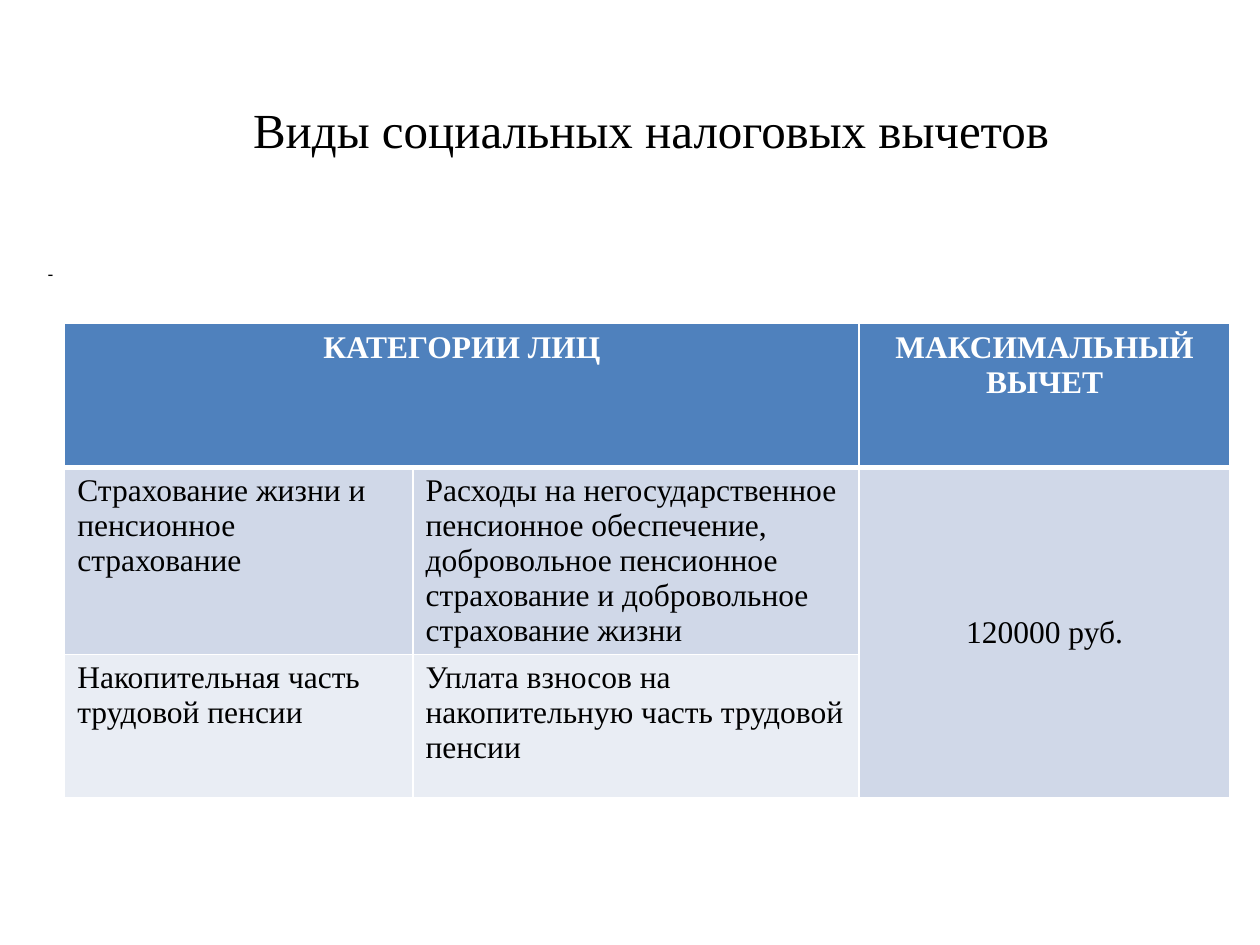
from lxml import etree
from pptx import Presentation
from pptx import util as u
from pptx.dml.color import RGBColor
from pptx.enum import text
from pptx.oxml import ns

Pt = u.Pt
COLORS = {"ink": "000000", "white": "FFFFFF", "header": "4F81BD",
          "band1": "D0D8E8", "band2": "E9EDF4"}
LEFT, CENTER = text.PP_ALIGN.LEFT, text.PP_ALIGN.CENTER
TOP, MIDDLE = text.MSO_ANCHOR.TOP, text.MSO_ANCHOR.MIDDLE

# Content
TITLE = "Виды социальных налоговых вычетов"
BODY = "-"
ROWS = [
    ["КАТЕГОРИИ ЛИЦ", "", "МАКСИМАЛЬНЫЙ ВЫЧЕТ"],
    ["Страхование жизни и пенсионное страхование",
     "Расходы на негосударственное пенсионное обеспечение, добровольное "
     "пенсионное страхование и добровольное страхование жизни",
     "120000 руб."],
    ["Накопительная часть трудовой пенсии",
     "Уплата взносов на накопительную часть трудовой пенсии", ""],
]
COL_WIDTHS = [199, 255, 212]
ROW_HEIGHTS = [82, 107, 82]
ROW_FILLS = ["header", "band1", "band2"]
MERGES = [((0, 0), (0, 1)), ((1, 2), (2, 2))]


def write(tf, words, align, size, font="Times New Roman", color="ink", bold=False):
    p = tf.paragraphs[0]
    p.alignment = align
    r = p.add_run()
    r.text = words
    for name, value in {"name": font, "size": Pt(size), "bold": bold}.items():
        setattr(r.font, name, value)
    r.font.color.rgb = RGBColor.from_string(COLORS[color])
    return p


def place(sp, box, anchor, top_margin):
    sp.left, sp.top, sp.width, sp.height = map(Pt, box)
    frame = {"word_wrap": True, "auto_size": text.MSO_AUTO_SIZE.NONE,
             "vertical_anchor": anchor, "margin_top": Pt(top_margin)}
    for name, value in frame.items():
        setattr(sp.text_frame, name, value)
    return sp.text_frame


def set_borders(cell, bottom):
    tcPr = cell._tc.get_or_add_tcPr()
    widths = {"lnL": 1, "lnR": 1, "lnT": 1, "lnB": bottom}
    for i, (tag, width) in enumerate(widths.items()):
        ln = etree.Element(ns.qn("a:" + tag), w=str(Pt(width)))
        fill = etree.SubElement(ln, ns.qn("a:solidFill"))
        etree.SubElement(fill, ns.qn("a:srgbClr"), val=COLORS["white"])
        tcPr.insert(i, ln)


prs = Presentation()
prs.slide_width, prs.slide_height = Pt(720), Pt(540)
s = prs.slides.add_slide(prs.slide_layouts[1])

# Title and body
write(place(s.shapes.title, (60, 9.5, 624, 96.5), MIDDLE, 35), TITLE, CENTER, 28)
p = write(place(s.placeholders[1], (20, 122.5, 672, 381.5), TOP, 28), BODY, LEFT, 10, "Arial")
p.space_before = Pt(0)
pPr = p._p.get_or_add_pPr()
for name in ("marL", "indent"):
    pPr.set(name, "0")
etree.SubElement(pPr, ns.qn("a:buNone"))

# Table
table = s.shapes.add_table(len(ROWS), len(COL_WIDTHS), Pt(37), Pt(185),
                           Pt(sum(COL_WIDTHS)), Pt(sum(ROW_HEIGHTS))).table
for col, width in zip(table.columns, COL_WIDTHS):
    col.width = Pt(width)
for row, height in zip(table.rows, ROW_HEIGHTS):
    row.height = Pt(height)
for start, end in MERGES:
    table.cell(*start).merge(table.cell(*end))

for i, row in enumerate(ROWS):
    header = i == 0
    for j, words in enumerate(row):
        cell = table.cell(i, j)
        last = j == len(row) - 1
        cell.fill.solid()
        cell.fill.fore_color.rgb = RGBColor.from_string(
            COLORS["band1" if last and not header else ROW_FILLS[i]])
        set_borders(cell, 3 if header else 1)
        cell.vertical_anchor = MIDDLE if last and not header else TOP
        if words:
            write(cell.text_frame, words, CENTER if header or last else LEFT, 18,
                  color="white" if header else "ink", bold=header)

prs.save("out.pptx")
